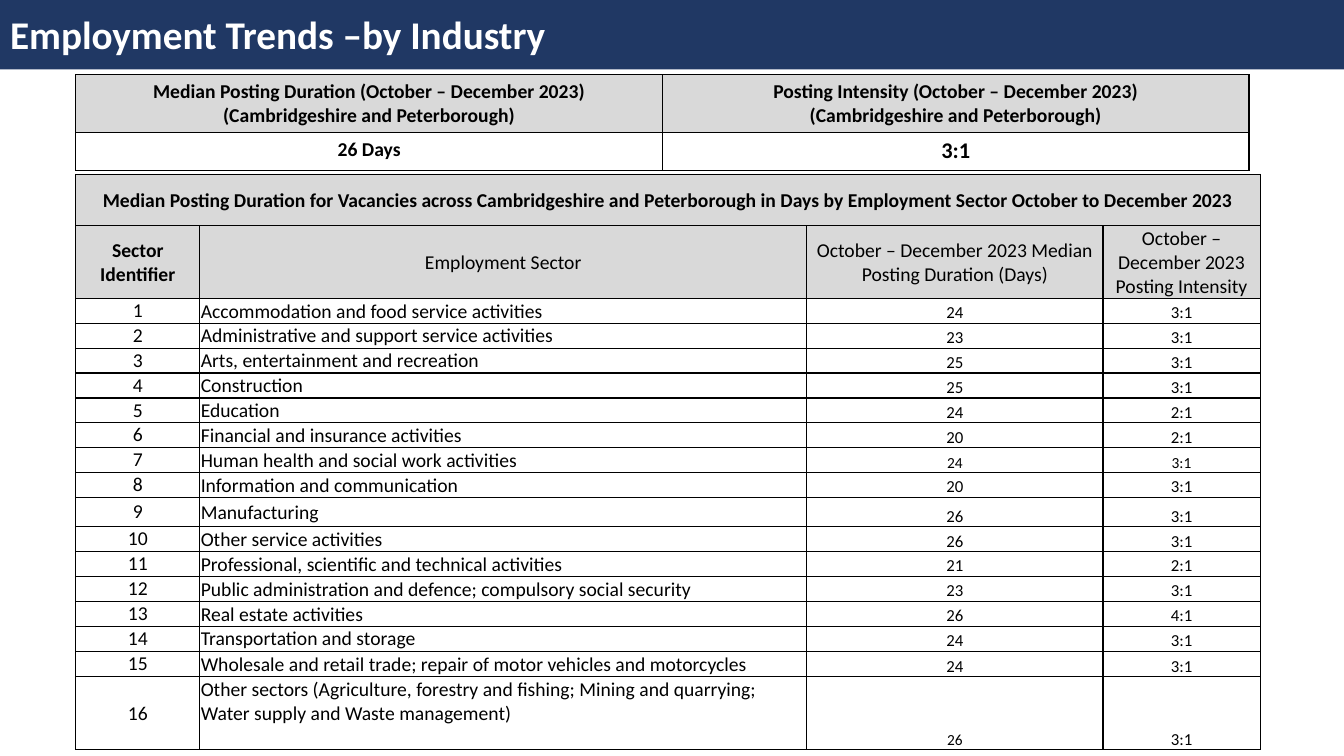
from lxml import etree
from pptx import Presentation
from pptx.dml.color import RGBColor
from pptx.enum.text import MSO_ANCHOR, PP_ALIGN
from pptx.oxml.ns import qn
from pptx.util import Pt

NAVY = RGBColor(0x20, 0x38, 0x64)
GREY = RGBColor(0xD9, 0xD9, 0xD9)
WHITE = RGBColor(0xFF, 0xFF, 0xFF)
BLACK = RGBColor(0, 0, 0)
LEFT, CENTER = PP_ALIGN.LEFT, PP_ALIGN.CENTER
TOP, MIDDLE, BOTTOM = MSO_ANCHOR.TOP, MSO_ANCHOR.MIDDLE, MSO_ANCHOR.BOTTOM
TITLE_ONLY = 5
PERIOD = "October – December 2023"
AREA = "Cambridgeshire and Peterborough"

SECTORS = [
    ("Accommodation and food service activities", 24, "3:1"),
    ("Administrative and support service activities", 23, "3:1"),
    ("Arts, entertainment and recreation", 25, "3:1"),
    ("Construction", 25, "3:1"),
    ("Education", 24, "2:1"),
    ("Financial and insurance activities", 20, "2:1"),
    ("Human health and social work activities", 24, "3:1"),
    ("Information and communication", 20, "3:1"),
    ("Manufacturing", 26, "3:1"),
    ("Other service activities", 26, "3:1"),
    ("Professional, scientific and technical activities", 21, "2:1"),
    ("Public administration and defence; compulsory social security", 23, "3:1"),
    ("Real estate activities", 26, "4:1"),
    ("Transportation and storage", 24, "3:1"),
    ("Wholesale and retail trade; repair of motor vehicles and motorcycles", 24, "3:1"),
    ("Other sectors (Agriculture, forestry and fishing; Mining and quarrying; "
     "Water supply and Waste management)", 26, "3:1"),
]
ROW_HEIGHTS = {9: 20.9, 15: 18.4, 16: 52}
DAYS_SIZES = {7: 11, 16: 11}
INTENSITY_SIZES = {7: 11}


def write(frame, text, size=14, bold=False, color=BLACK, align=CENTER, font="Calibri"):
    for index, line in enumerate(text.split("\n")):
        para = frame.add_paragraph() if index else frame.paragraphs[0]
        para.alignment = align
        span = para.add_run()
        span.text = line
        span.font.name = font
        span.font.size = Pt(size)
        span.font.bold = bold
        span.font.color.rgb = color


class SlideBuilder:
    def __init__(self, page, border_width=1):
        self.page = page
        self.border_width = border_width

    def title(self, text, left, top, width, height):
        box = self.page.shapes.title
        box.left, box.top, box.width, box.height = Pt(left), Pt(top), Pt(width), Pt(height)
        box.fill.solid()
        box.fill.fore_color.rgb = NAVY
        box.text_frame.vertical_anchor = MIDDLE
        write(box.text_frame, text, size=28, bold=True, color=WHITE, align=LEFT)

    def table(self, left, top, widths, heights):
        frame = self.page.shapes.add_table(
            len(heights), len(widths), Pt(left), Pt(top), Pt(sum(widths)), Pt(sum(heights)))
        table = frame.table
        table.first_row = table.horz_banding = False
        for column, width in zip(table.columns, widths):
            column.width = Pt(width)
        for row, height in zip(table.rows, heights):
            row.height = Pt(height)
        for cell in table.iter_cells():
            self.borders(cell)
            cell.fill.background()
        return table

    def borders(self, cell):
        properties = cell._tc.get_or_add_tcPr()
        for side in ("a:lnL", "a:lnR", "a:lnT", "a:lnB"):
            line = etree.SubElement(properties, qn(side), w=str(Pt(self.border_width)))
            fill = etree.SubElement(line, qn("a:solidFill"))
            etree.SubElement(fill, qn("a:srgbClr"), val=str(BLACK))

    def cell(self, cell, text, anchor=MIDDLE, fill=None, inset=None, **style):
        cell.vertical_anchor = anchor
        if fill is not None:
            cell.fill.solid()
            cell.fill.fore_color.rgb = fill
        if inset is not None:
            cell.margin_left = cell.margin_top = cell.margin_right = Pt(inset)
            cell.margin_bottom = 0
        write(cell.text_frame, text, **style)


def add_summary(builder):
    table = builder.table(54.2, 53.3, [419, 419], [41.4, 26.9])
    summary = [("Median Posting Duration", "26 Days", 14), ("Posting Intensity", "3:1", 16)]
    for column, (measure, value, size) in enumerate(summary):
        builder.cell(table.cell(0, column), f"{measure} ({PERIOD})\n({AREA})",
                     fill=GREY, bold=True)
        builder.cell(table.cell(1, column), value, anchor=TOP, size=size, bold=True)


def add_sectors(builder):
    numbers = range(1, len(SECTORS) + 1)
    heights = [36.7, 51.6] + [ROW_HEIGHTS.get(number, 17.6) for number in numbers]
    table = builder.table(54.2, 124.6, [88.5, 433.6, 211.6, 112.3], heights)
    table.cell(0, 0).merge(table.cell(0, 3))
    builder.cell(table.cell(0, 0),
                 f"Median Posting Duration for Vacancies across {AREA} in Days "
                 "by Employment Sector October to December 2023",
                 fill=GREY, inset=0.72, bold=True)
    headings = ["Sector Identifier", "Employment Sector",
                f"{PERIOD} Median Posting Duration (Days)", f"{PERIOD} Posting Intensity"]
    for column, heading in enumerate(headings):
        builder.cell(table.cell(1, column), heading, fill=GREY, inset=0.72, bold=column == 0)
    for number, (sector, days, intensity) in zip(numbers, SECTORS):
        row = number + 1
        name_anchor = TOP if number == len(SECTORS) else MIDDLE
        builder.cell(table.cell(row, 0), str(number), inset=0)
        builder.cell(table.cell(row, 1), sector, anchor=name_anchor, inset=0.72, align=LEFT)
        builder.cell(table.cell(row, 2), str(days), anchor=BOTTOM, inset=0.72,
                     size=DAYS_SIZES.get(number, 12))
        builder.cell(table.cell(row, 3), intensity, anchor=BOTTOM, inset=0.72,
                     size=INTENSITY_SIZES.get(number, 12))


def main():
    deck = Presentation()
    deck.slide_width, deck.slide_height = Pt(960), Pt(540)
    page = deck.slides.add_slide(deck.slide_layouts[TITLE_ONLY])
    builder = SlideBuilder(page)
    builder.title("Employment Trends –by Industry", 0, -1.5, 960, 51)
    add_summary(builder)
    add_sectors(builder)
    deck.save("out.pptx")


if __name__ == "__main__":
    main()
